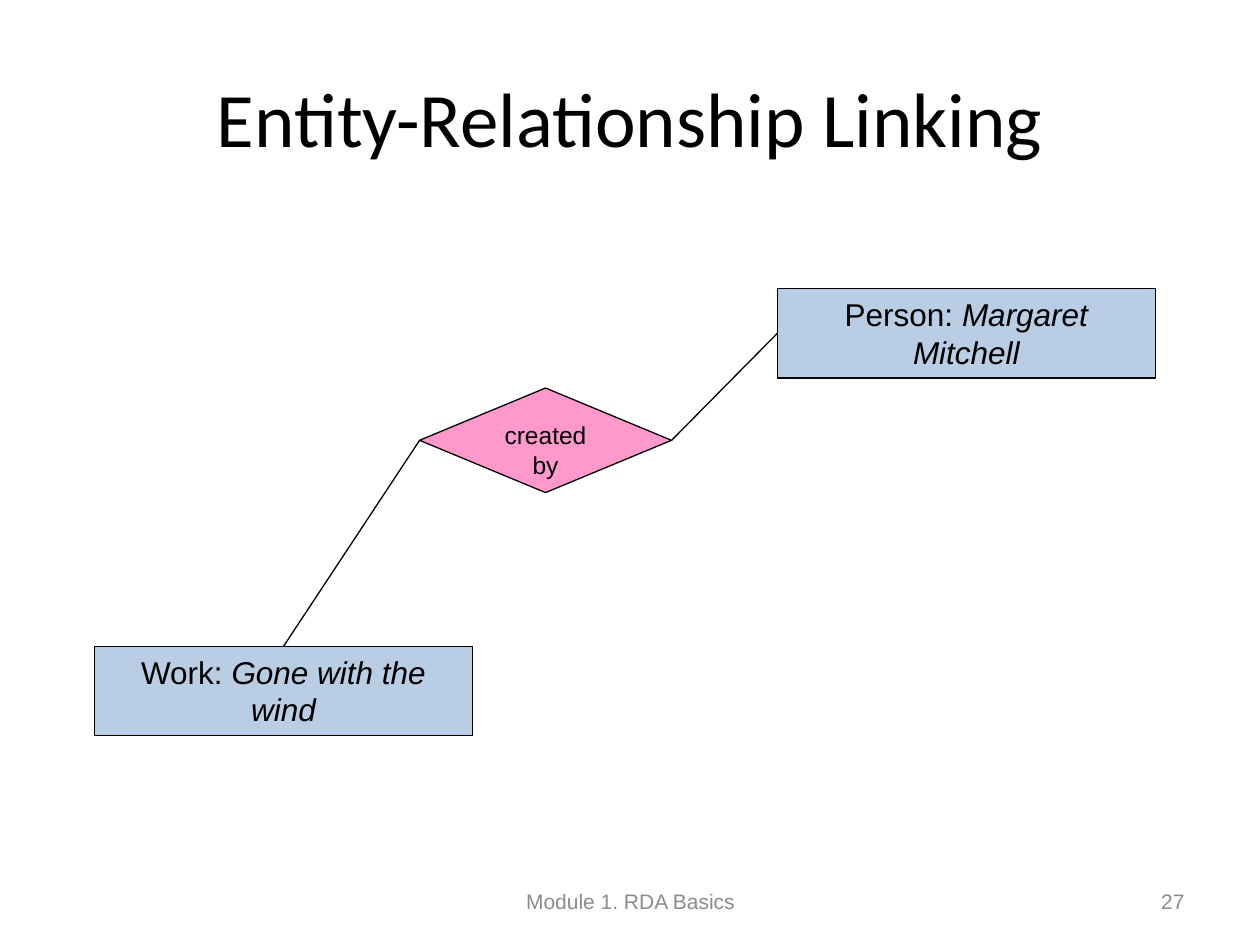
"""Build the entity-relationship linking slide."""
from pptx import Presentation
from pptx.dml.color import RGBColor
from pptx.enum.shapes import MSO_CONNECTOR, MSO_SHAPE
from pptx.enum.text import MSO_ANCHOR, PP_ALIGN
from pptx.oxml.ns import qn
from pptx.util import Inches, Pt

BLACK, GRAY, BLUE, PINK = "000000", "8C8C8C", "B9CDE5", "FF99CC"
TOP, LEFT, RIGHT = 0, 1, 3

LABELS = [
    ("Entity-Relationship Linking", (0.5, 0.3, 9, 1.25), PP_ALIGN.CENTER,
     {"name": "Calibri", "size": Pt(44)}, BLACK),
    ("Module 1. RDA Basics", (3.42, 6.95, 3.17, 0.4), PP_ALIGN.CENTER,
     {"name": "Arial", "size": Pt(12)}, GRAY),
    ("27", (7.17, 6.95, 2.33, 0.4), PP_ALIGN.RIGHT,
     {"name": "Arial", "size": Pt(12)}, GRAY),
]
NODES = {
    "work": (MSO_SHAPE.RECTANGLE, (0.75, 5.13, 3, 0.71), BLUE, 18,
             [("Work: ", False), ("Gone with the wind", True)]),
    "person": (MSO_SHAPE.RECTANGLE, (6.17, 2.29, 3, 0.71), BLUE, 18,
               [("Person: ", False), ("Margaret Mitchell", True)]),
    "created by": (MSO_SHAPE.FLOWCHART_DECISION, (3.33, 3.08, 2, 0.83), PINK, 14,
                   [("created by", False)]),
}
LINKS = [
    ("created by", RIGHT, "person", LEFT),
    ("created by", LEFT, "work", TOP),
]


def color(value):
    return RGBColor.from_string(value)


def write(shape, runs, alignment, anchor, font_values, text_color):
    frame = shape.text_frame
    frame.word_wrap = True
    frame.vertical_anchor = anchor
    paragraph = frame.paragraphs[0]
    paragraph.alignment = alignment
    for text, italic in runs:
        run = paragraph.add_run()
        run.text = text
        for name, value in {**font_values, "italic": italic}.items():
            setattr(run.font, name, value)
        run.font.color.rgb = color(text_color)


def outline(shape):
    shape.line.color.rgb = color(BLACK)
    shape.line.width = Pt(0.75)


def add_label(slide, text, box, alignment, font_values, text_color):
    shape = slide.shapes.add_textbox(*map(Inches, box))
    write(shape, [(text, False)], alignment, MSO_ANCHOR.MIDDLE, font_values, text_color)


def add_node(slide, preset, box, fill, size, runs):
    shape = slide.shapes.add_shape(preset, *map(Inches, box))
    shape.shadow.inherit = False
    shape.fill.solid()
    shape.fill.fore_color.rgb = color(fill)
    outline(shape)
    write(shape, runs, PP_ALIGN.CENTER, MSO_ANCHOR.TOP,
          {"name": "Arial", "size": Pt(size)}, BLACK)
    return shape


def add_link(slide, start, start_site, end, end_site):
    connector = slide.shapes.add_connector(MSO_CONNECTOR.STRAIGHT, 0, 0, 0, 0)
    connector.begin_connect(start, start_site)
    connector.end_connect(end, end_site)
    outline(connector)
    properties = connector._element.spPr
    properties.append(properties.makeelement(qn("a:effectLst"), {}))


def main():
    presentation = Presentation()
    presentation.slide_width, presentation.slide_height = Inches(10), Inches(7.5)
    slide = presentation.slides.add_slide(presentation.slide_layouts[6])
    for label in LABELS:
        add_label(slide, *label)
    shapes = {name: add_node(slide, *node) for name, node in NODES.items()}
    for start, start_site, end, end_site in LINKS:
        add_link(slide, shapes[start], start_site, shapes[end], end_site)
    presentation.save("out.pptx")


if __name__ == "__main__":
    main()
